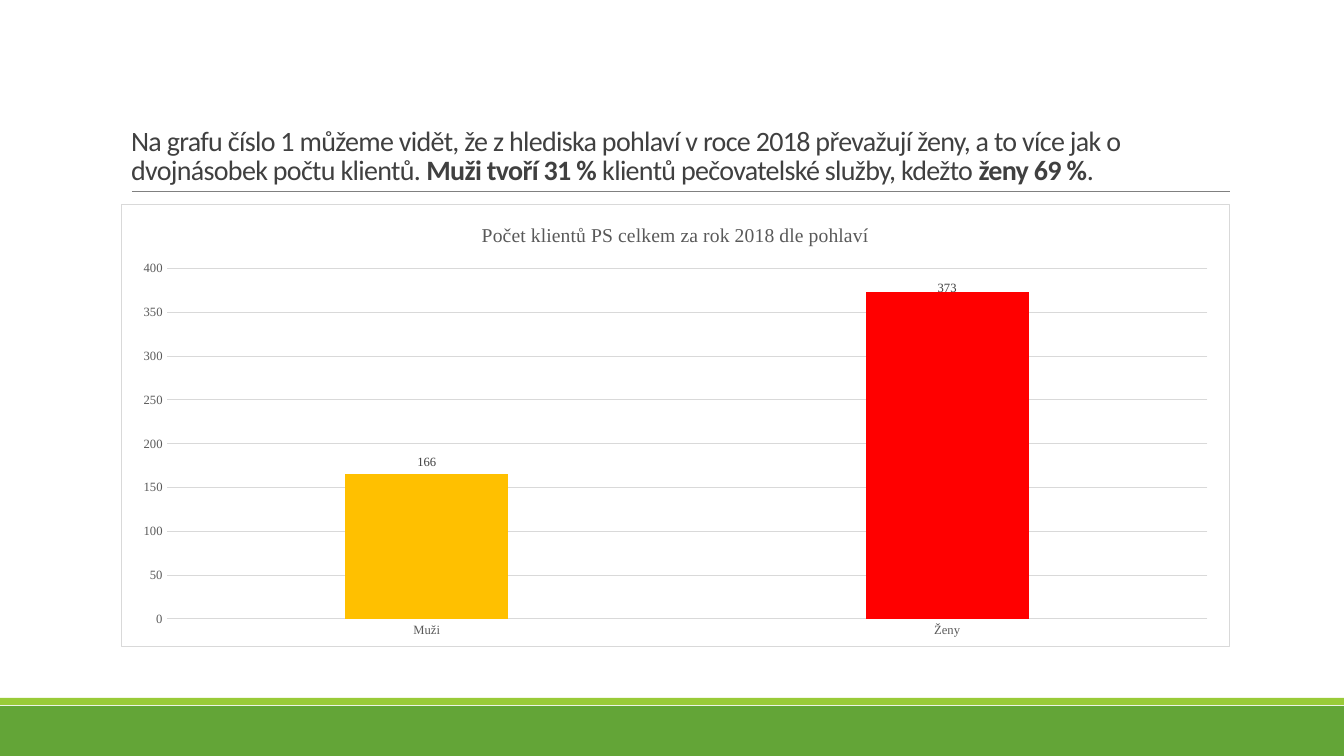
from pptx import Presentation, util as u
from pptx.chart.data import CategoryChartData
from pptx.dml.color import RGBColor
from pptx.enum import chart as ch, shapes, text
from pptx.oxml import parse_xml
from pptx.oxml.ns import nsdecls, qn

PX = 914400 / 100.8
GREY = "D9D9D9"
SERIF = "Times New Roman"


def px(*vals):
    """Turn pixel lengths into EMU."""
    return [round(v * PX) for v in vals]


def style(font, name, size, color):
    font.name, font.size, font.bold = name, u.Pt(size), False
    font.color.rgb = RGBColor.from_string(color)


prs = Presentation()
prs.slide_width, prs.slide_height = px(1344, 756)
slide = prs.slides.add_slide(prs.slide_layouts[5])

# Footer bands and title rule
for top, high, color in [(706, 50, "63A537"), (698, 7, "99CB38")]:
    band = slide.shapes.add_shape(shapes.MSO_SHAPE.RECTANGLE, *px(0, top, 1344, high))
    band.shadow.inherit = False
    band.fill.solid()
    band.fill.fore_color.rgb = RGBColor.from_string(color)
    band.line.fill.background()

rule = slide.shapes.add_connector(shapes.MSO_CONNECTOR.STRAIGHT, *px(132, 191, 1230, 191))
rule.line.color.rgb = RGBColor.from_string("808080")
rule.line.width = u.Pt(0.5)
rule._element.spPr.append(parse_xml(f"<a:effectLst {nsdecls('a')}/>"))

# Title
title = slide.shapes.title
title.left, title.top, title.width, title.height = px(121, 31, 1109, 160)
frame = title.text_frame
frame.word_wrap = True
frame.auto_size = text.MSO_AUTO_SIZE.NONE
frame.vertical_anchor = text.MSO_ANCHOR.BOTTOM
para = frame.paragraphs[0]
para.alignment = text.PP_ALIGN.LEFT
para.line_spacing = 0.85
parts = [
    "Na grafu číslo 1 můžeme vidět, že z hlediska pohlaví v roce 2018 převažují ženy, "
    "a to více jak o dvojnásobek počtu klientů. ",
    "Muži tvoří 31 %",
    " klientů pečovatelské služby, kdežto ",
    "ženy 69 %",
    ".",
]
for i, part in enumerate(parts):
    run = para.add_run()
    run.text = part
    style(run.font, "Calibri", 20, "404040")
    run.font.bold = i % 2 == 1
    run._r.get_or_add_rPr().set("spc", "-50")

# Chart
data = CategoryChartData()
data.categories = ["Muži", "Ženy"]
data.add_series("Series 1", [166, 373])
chart = slide.shapes.add_chart(
    ch.XL_CHART_TYPE.COLUMN_CLUSTERED, *px(121, 204, 1109, 443), data
).chart
style(chart.font, "Calibri", 10, "000000")
chart.has_legend = False
chart.has_title = True
head = chart.chart_title.text_frame
head.text = "Počet klientů PS celkem za rok 2018 dle pohlaví"
style(head.paragraphs[0].runs[0].font, SERIF, 14, "595959")
area = parse_xml(
    f'<c:spPr {nsdecls("c", "a")}><a:solidFill><a:srgbClr val="FFFFFF"/></a:solidFill>'
    f'<a:ln w="9525"><a:solidFill><a:srgbClr val="{GREY}"/></a:solidFill></a:ln></c:spPr>'
)
chart._chartSpace.find(qn("c:chart")).addnext(area)

cat, val = chart.category_axis, chart.value_axis
for axis in (cat, val):
    axis.major_tick_mark = axis.minor_tick_mark = ch.XL_TICK_MARK.NONE
    style(axis.tick_labels.font, SERIF, 9, "595959")
val.minimum_scale, val.maximum_scale, val.major_unit = 0, 400, 50
val.has_major_gridlines = True
val.format.line.fill.background()
for line in (cat.format.line, val.major_gridlines.format.line):
    line.color.rgb = RGBColor.from_string(GREY)
    line.width = u.Pt(0.75)

plot = chart.plots[0]
plot.vary_by_categories = False
plot.gap_width, plot.overlap = 219, -27
bars = plot.series[0]
bars.format.fill.solid()
bars.format.fill.fore_color.rgb = RGBColor.from_string("63A537")
for i, color in enumerate(["FFC000", "FF0000"]):
    fill = bars.points[i].format.fill
    fill.solid()
    fill.fore_color.rgb = RGBColor.from_string(color)

labels = bars.data_labels
labels.show_value = True
labels.position = ch.XL_LABEL_POSITION.OUTSIDE_END
style(labels.font, SERIF, 9, "404040")

# The label for women sits slightly lower, against its bar
women = bars.points[1].data_label
style(women.font, SERIF, 9, "404040")
women.position = ch.XL_LABEL_POSITION.OUTSIDE_END
shift = parse_xml(
    f'<c:layout {nsdecls("c")}><c:manualLayout><c:x val="0"/><c:y val="0.016"/>'
    "</c:manualLayout></c:layout>"
)
bars._element.find(".//" + qn("c:dLbl")).find(qn("c:idx")).addnext(shift)

prs.save("out.pptx")
